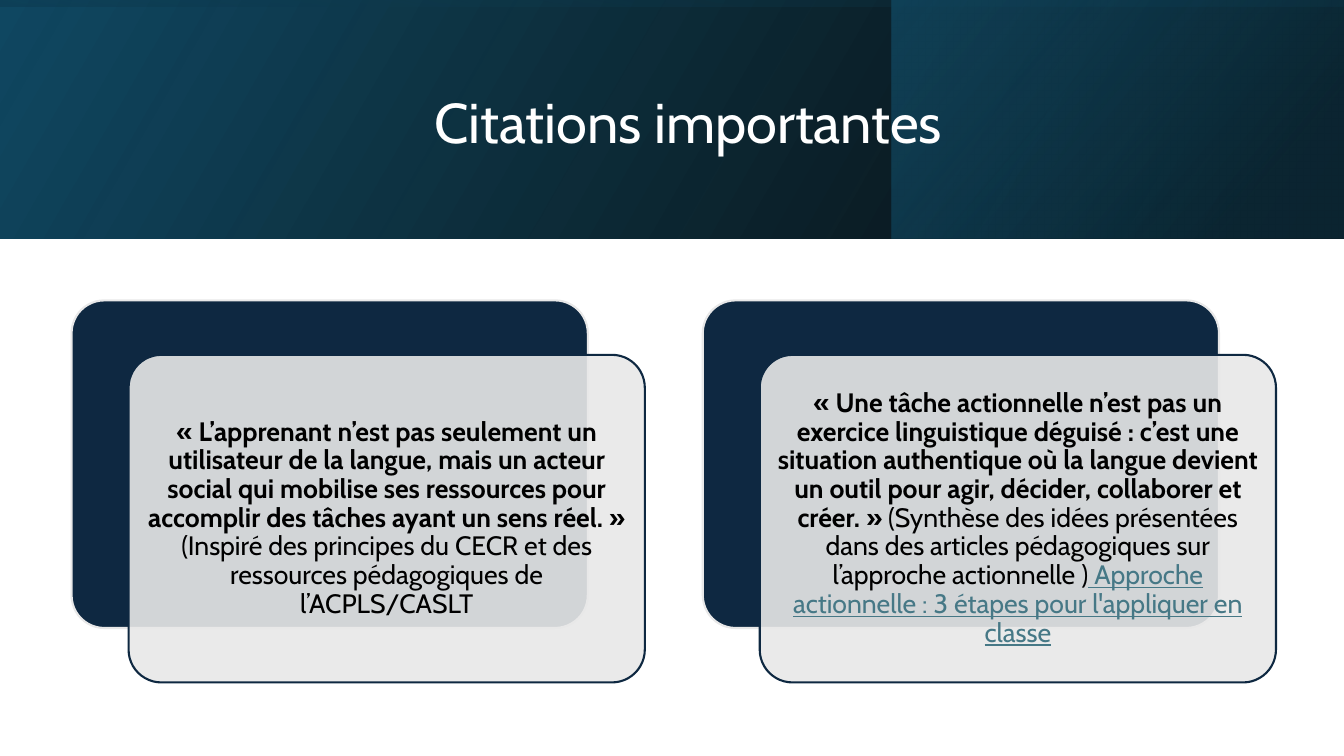
from lxml import etree
from pptx import Presentation
from pptx import util as u
from pptx.dml.color import RGBColor
from pptx.enum import shapes, text
from pptx.oxml import parse_xml
from pptx.oxml.ns import nsdecls, qn

WIDTH, HEIGHT = 13.33, 7.5
BANNER_HEIGHT = 2.37
CARD_WIDTH, CARD_HEIGHT = 5.12, 3.25
CARD_LEFT, CARD_TOP, CARD_PITCH = 0.71, 2.98, 6.26
CARD_SHIFT = (0.565, 0.54)
TEXT_MARGIN = 0.1

FONT = "Cabin"
WHITE = RGBColor(0xFF, 0xFF, 0xFF)
BLACK = RGBColor(0x00, 0x00, 0x00)
NAVY = RGBColor(0x0E, 0x28, 0x41)
GREY = RGBColor(0xE8, 0xE8, 0xE8)
LINK = RGBColor(0x46, 0x78, 0x86)
OCEAN = RGBColor(0x10, 0x48, 0x62)
DEEP = RGBColor(0x0B, 0x30, 0x41)
TEAL = RGBColor(0x15, 0x60, 0x82)

# Each quotation is a list of (wording, style) spans.
QUOTES = [
    [
        ("« L’apprenant n’est pas seulement un utilisateur de la langue, mais un acteur "
         "social qui mobilise ses ressources pour accomplir des tâches ayant un sens réel. »",
         "bold"),
        (" (Inspiré des principes du CECR et des ressources pédagogiques de l’ACPLS/CASLT",
         "plain"),
    ],
    [
        ("« Une tâche actionnelle n’est pas un exercice linguistique déguisé : c’est une "
         "situation authentique où la langue devient un outil pour agir, décider, "
         "collaborer et créer. »", "bold"),
        (" (Synthèse des idées présentées dans des articles pédagogiques sur l’approche "
         "actionnelle )", "plain"),
        (" Approche actionnelle : 3 étapes pour l'appliquer en classe", "link"),
    ],
]


def inches(*lengths):
    return [u.Inches(length) for length in lengths]


def add_gradient_panel(slide, area, stops, angle, rotation=0):
    """Add a mirrored rectangle; stops are (position, colour, opacity) in percent."""
    panel = slide.shapes.add_shape(shapes.MSO_SHAPE.RECTANGLE, *inches(*area))
    panel.shadow.inherit = False
    panel.line.fill.background()
    panel.rotation = rotation
    properties = panel.element.spPr
    properties.find(qn("a:xfrm")).set("flipH", "1")
    marks = "".join(
        f'<a:gs pos="{position * 1000}"><a:srgbClr val="{colour}">'
        f'<a:alpha val="{opacity * 1000}"/></a:srgbClr></a:gs>'
        for position, colour, opacity in stops)
    gradient = parse_xml(
        f'<a:gradFill {nsdecls("a")} rotWithShape="1"><a:gsLst>{marks}</a:gsLst>'
        f'<a:lin ang="{angle * 60000}" scaled="0"/></a:gradFill>')
    properties.find(qn("a:prstGeom")).addnext(gradient)


def add_banner(slide):
    add_gradient_panel(slide, (0, 0, WIDTH, BANNER_HEIGHT),
                       [(0, BLACK, 96), (100, OCEAN, 100)], 330)
    add_gradient_panel(slide, (8.84, 0, WIDTH - 8.84, BANNER_HEIGHT),
                       [(19, DEEP, 68), (100, TEAL, 48)], 320)
    offset = (WIDTH - BANNER_HEIGHT) / 2
    add_gradient_panel(slide, (offset, -offset, BANNER_HEIGHT, WIDTH),
                       [(23, OCEAN, 16), (99, BLACK, 45)], 350, rotation=270)


def add_centred_text(slide, area, spans, size, colour, inset):
    box = slide.shapes.add_textbox(*inches(*area))
    frame = box.text_frame
    frame.word_wrap = True
    frame.vertical_anchor = text.MSO_ANCHOR.MIDDLE
    frame.margin_left = frame.margin_right = u.Inches(inset)
    frame.margin_top = frame.margin_bottom = u.Inches(min(inset, 0.08))
    para = frame.paragraphs[0]
    para.alignment = text.PP_ALIGN.CENTER
    para.line_spacing = 0.9
    for wording, style in spans:
        span = para.add_run()
        span.text = wording
        span.font.name = FONT
        span.font.size = u.Pt(size)
        span.font.bold = style == "bold"
        span.font.underline = style == "link"
        span.font.color.rgb = LINK if style == "link" else colour


def add_card(slide, left, top, fill, line, opacity=100):
    card = slide.shapes.add_shape(shapes.MSO_SHAPE.ROUNDED_RECTANGLE,
                                  *inches(left, top, CARD_WIDTH, CARD_HEIGHT))
    card.adjustments[0] = 0.1
    card.shadow.inherit = False
    card.fill.solid()
    card.fill.fore_color.rgb = fill
    card.line.color.rgb = line
    card.line.width = u.Pt(1.5)
    if opacity < 100:
        colour = card.element.spPr.find(qn("a:solidFill")).find(qn("a:srgbClr"))
        etree.SubElement(colour, qn("a:alpha")).set("val", str(opacity * 1000))


def add_quote(slide, column, spans):
    left = CARD_LEFT + column * CARD_PITCH
    front_left, front_top = left + CARD_SHIFT[0], CARD_TOP + CARD_SHIFT[1]
    add_card(slide, left, CARD_TOP, NAVY, GREY)
    add_card(slide, front_left, front_top, GREY, NAVY, opacity=90)
    area = (front_left + TEXT_MARGIN, front_top + TEXT_MARGIN,
            CARD_WIDTH - 2 * TEXT_MARGIN, CARD_HEIGHT - 2 * TEXT_MARGIN)
    add_centred_text(slide, area, spans, 19, BLACK, 0.08)


def main():
    deck = Presentation()
    deck.slide_width, deck.slide_height = inches(WIDTH, HEIGHT)
    slide = deck.slides.add_slide(deck.slide_layouts[6])
    add_banner(slide)
    add_centred_text(slide, (1.51, 0.38, 10.63, 1.72),
                     [("Citations importantes", "plain")], 40, WHITE, 0.1)
    for column, spans in enumerate(QUOTES):
        add_quote(slide, column, spans)
    deck.save("out.pptx")


if __name__ == "__main__":
    main()
